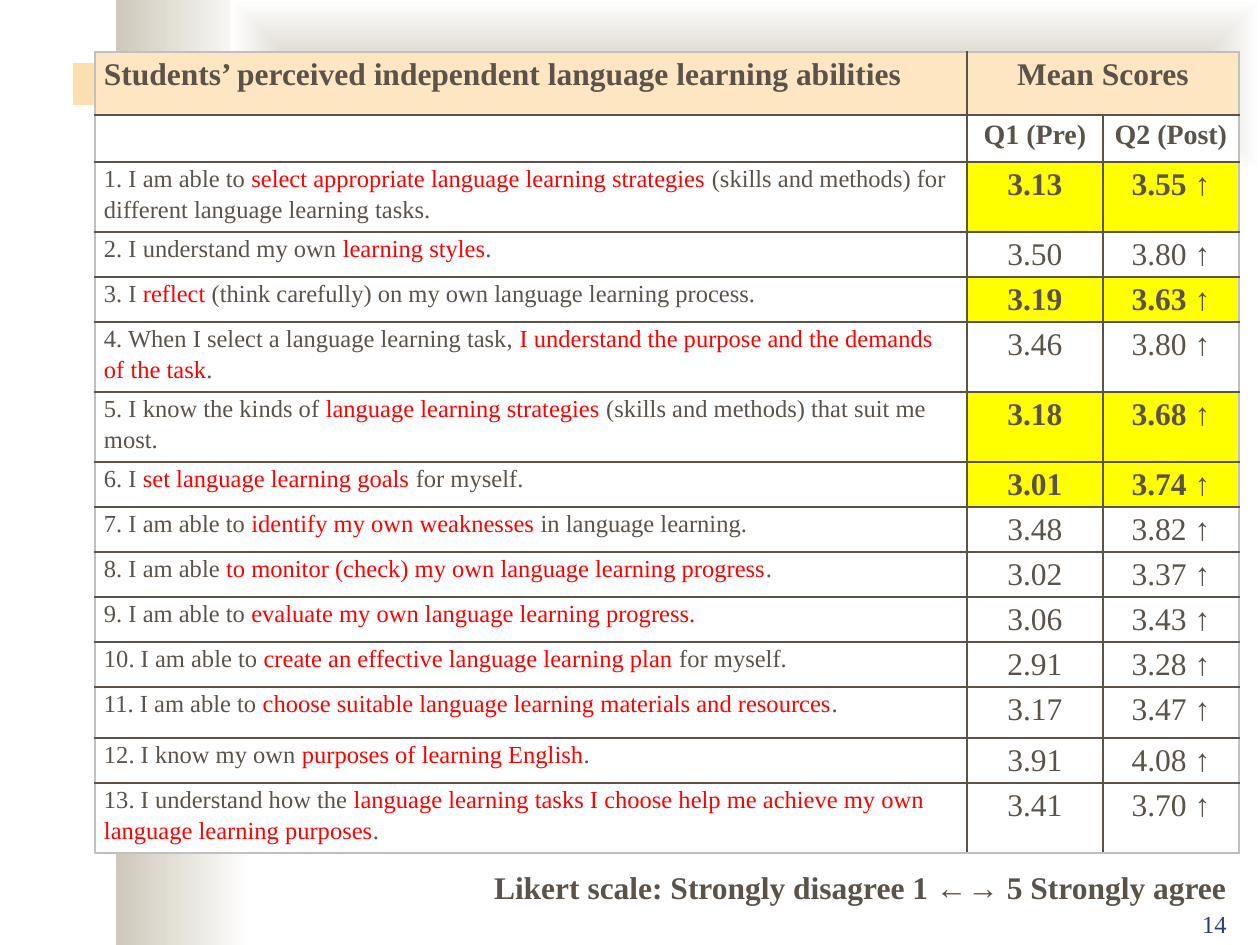
from lxml.etree import SubElement
from pptx import Presentation
from pptx.dml.color import RGBColor
from pptx.enum.shapes import MSO_SHAPE
from pptx.enum.text import PP_ALIGN
from pptx.oxml.ns import qn
from pptx.util import Pt

EMU_PER_PX = 914400 // 126
FONT = "Times New Roman"
BROWN = RGBColor(0x5B, 0x52, 0x49)
RED = RGBColor(0xFF, 0x00, 0x00)
NAVY = RGBColor(0x2A, 0x3D, 0x7A)
WHITE = RGBColor(0xFF, 0xFF, 0xFF)
YELLOW = RGBColor(0xFF, 0xFF, 0x00)
PEACH = RGBColor(0xFD, 0xE6, 0xC1)
ORANGE = RGBColor(0xFA, 0xC1, 0x64)
STONE = RGBColor(0xCE, 0xC8, 0xBA)
FRAME_GREY = RGBColor(0xC0, 0xC0, 0xC0)

COLUMN_WIDTHS = [872, 136, 136]
HEADER_HEIGHTS = [63, 47]
ITEM_HEIGHT = 45
TALL_ITEMS = {1: 70, 4: 70, 5: 70, 11: 51, 13: 70}
HIGHLIGHTED_ITEMS = {1, 3, 5, 6}

ABILITIES = [
    ("I am able to ", "select appropriate language learning strategies ",
     "(skills and methods) for different language learning tasks.", "3.13", "3.55"),
    ("I understand my own ", "learning styles", ".", "3.50", "3.80"),
    ("I ", "reflect", " (think carefully) on my own language learning process.",
     "3.19", "3.63"),
    ("When I select a language learning task, ",
     "I understand the purpose and the demands of the task", ".", "3.46", "3.80"),
    ("I know the kinds of ", "language learning strategies ",
     "(skills and methods) that suit me most.", "3.18", "3.68"),
    ("I ", "set language learning goals ", "for myself.", "3.01", "3.74"),
    ("I am able to ", "identify my own weaknesses ", "in language learning.",
     "3.48", "3.82"),
    ("I am able ", "to monitor (check) my own language learning progress", ".",
     "3.02", "3.37"),
    ("I am able to ", "evaluate my own language learning progress.", "",
     "3.06", "3.43"),
    ("I am able to ", "create an effective language learning plan", " for myself.",
     "2.91", "3.28"),
    ("I am able to ", "choose suitable language learning materials and resources",
     ".", "3.17", "3.47"),
    ("I know my own ", "purposes of learning English", ".", "3.91", "4.08"),
    ("I understand how the ",
     "language learning tasks I choose help me achieve my own language learning purposes",
     ".", "3.41", "3.70"),
]


def px(*lengths):
    return [length * EMU_PER_PX for length in lengths]


def style_run(run, size, color, bold=False):
    run.font.name = FONT
    run.font.size = Pt(size)
    run.font.bold = bold
    run.font.color.rgb = color


def add_block(slide, box):
    block = slide.shapes.add_shape(MSO_SHAPE.RECTANGLE, *px(*box))
    block.shadow.inherit = False
    block.line.fill.background()
    return block


def add_gradient_block(slide, box, from_center=False):
    fill = add_block(slide, box).fill
    fill.gradient()
    fill.gradient_angle = 0
    for stop, position, color in zip(fill.gradient_stops, (0, 1), (STONE, WHITE)):
        stop.position = position
        stop.color.rgb = color
    if from_center:
        gradient = fill._xPr.find(qn("a:gradFill"))
        gradient.remove(gradient.find(qn("a:lin")))
        shade = SubElement(gradient, qn("a:path"), {"path": "shape"})
        SubElement(shade, qn("a:fillToRect"), dict.fromkeys("ltrb", "50000"))


def add_accent(slide, box):
    accent = add_block(slide, box)
    accent.fill.solid()
    accent.fill.fore_color.rgb = ORANGE
    color = accent.fill._xPr.find(qn("a:solidFill"))[0]
    SubElement(color, qn("a:alpha"), {"val": "50000"})


def add_caption(slide, box, text, size, color, bold=False):
    frame = slide.shapes.add_textbox(*px(*box)).text_frame
    frame.word_wrap = True
    frame.text = text
    frame.paragraphs[0].alignment = PP_ALIGN.RIGHT
    style_run(frame.paragraphs[0].runs[0], size, color, bold)


def fill_cell(cell, parts, size, bold=False, align=PP_ALIGN.LEFT):
    paragraph = cell.text_frame.paragraphs[0]
    paragraph.alignment = align
    paragraph.line_spacing = 1.15
    paragraph.space_after = Pt(6)
    for text, color in parts:
        if text:
            run = paragraph.add_run()
            run.text = text
            style_run(run, size, color, bold)


def paint_cell(cell, color, outer_sides):
    cell.margin_left, cell.margin_right = px(9, 9)
    cell.margin_top = cell.margin_bottom = 0
    properties = cell._tc.get_or_add_tcPr()
    for side in "LRTB":
        line = SubElement(properties, qn(f"a:ln{side}"), {"w": str(Pt(1))})
        solid = SubElement(line, qn("a:solidFill"))
        line_color = FRAME_GREY if side in outer_sides else BROWN
        SubElement(solid, qn("a:srgbClr"), {"val": str(line_color)})
    cell.fill.solid()
    cell.fill.fore_color.rgb = color


def cell_color(row, column):
    if row == 0:
        return PEACH
    if column > 0 and row - 1 in HIGHLIGHTED_ITEMS:
        return YELLOW
    return WHITE


def paint_table(table):
    last_row, last_column = len(table.rows) - 1, len(table.columns) - 1
    for row in range(last_row + 1):
        for column in range(last_column + 1):
            cell = table.cell(row, column)
            edges = {
                "L": column == 0,
                "R": column + cell.span_width > last_column,
                "T": row == 0,
                "B": row == last_row,
            }
            outer_sides = [side for side, outer in edges.items() if outer]
            paint_cell(cell, cell_color(row, column), outer_sides)


def add_scores_table(slide):
    heights = HEADER_HEIGHTS + [
        TALL_ITEMS.get(number, ITEM_HEIGHT) for number in range(1, len(ABILITIES) + 1)
    ]
    box = px(95, 52, sum(COLUMN_WIDTHS), sum(heights))
    table = slide.shapes.add_table(len(heights), len(COLUMN_WIDTHS), *box).table
    table.first_row = table.horz_banding = False
    for column, width in zip(table.columns, px(*COLUMN_WIDTHS)):
        column.width = width
    for row, height in zip(table.rows, px(*heights)):
        row.height = height
    table.cell(0, 1).merge(table.cell(0, 2))
    paint_table(table)

    heading = "Students’ perceived independent language learning abilities"
    fill_cell(table.cell(0, 0), [(heading, BROWN)], 18, True)
    fill_cell(table.cell(0, 1), [("Mean Scores", BROWN)], 18, True, PP_ALIGN.CENTER)
    for column, label in enumerate(["Q1 (Pre)", "Q2 (Post)"], 1):
        fill_cell(table.cell(1, column), [(label, BROWN)], 16, True, PP_ALIGN.CENTER)
    for number, (lead, skill, rest, pre, post) in enumerate(ABILITIES, 1):
        row = number + 1
        parts = [(f"{number}. {lead}", BROWN), (skill, RED), (rest, BROWN)]
        fill_cell(table.cell(row, 0), parts, 14)
        bold = number in HIGHLIGHTED_ITEMS
        for column, score in enumerate([pre, f"{post} ↑"], 1):
            fill_cell(table.cell(row, column), [(score, BROWN)], 18, bold, PP_ALIGN.CENTER)


def main():
    presentation = Presentation()
    presentation.slide_width, presentation.slide_height = px(1260, 945)
    slide = presentation.slides.add_slide(presentation.slide_layouts[6])
    add_gradient_block(slide, (116, 0, 136, 945))
    add_gradient_block(slide, (231, 0, 1029, 168), from_center=True)
    add_accent(slide, (73, 63, 315, 42))
    add_scores_table(slide)
    add_caption(slide, (977, 903, 262, 63), "14", 14, NAVY)
    add_caption(slide, (294, 862, 945, 50),
                "Likert scale: Strongly disagree 1 ←→ 5 Strongly agree", 18, BROWN, True)
    presentation.save("out.pptx")


if __name__ == "__main__":
    main()
